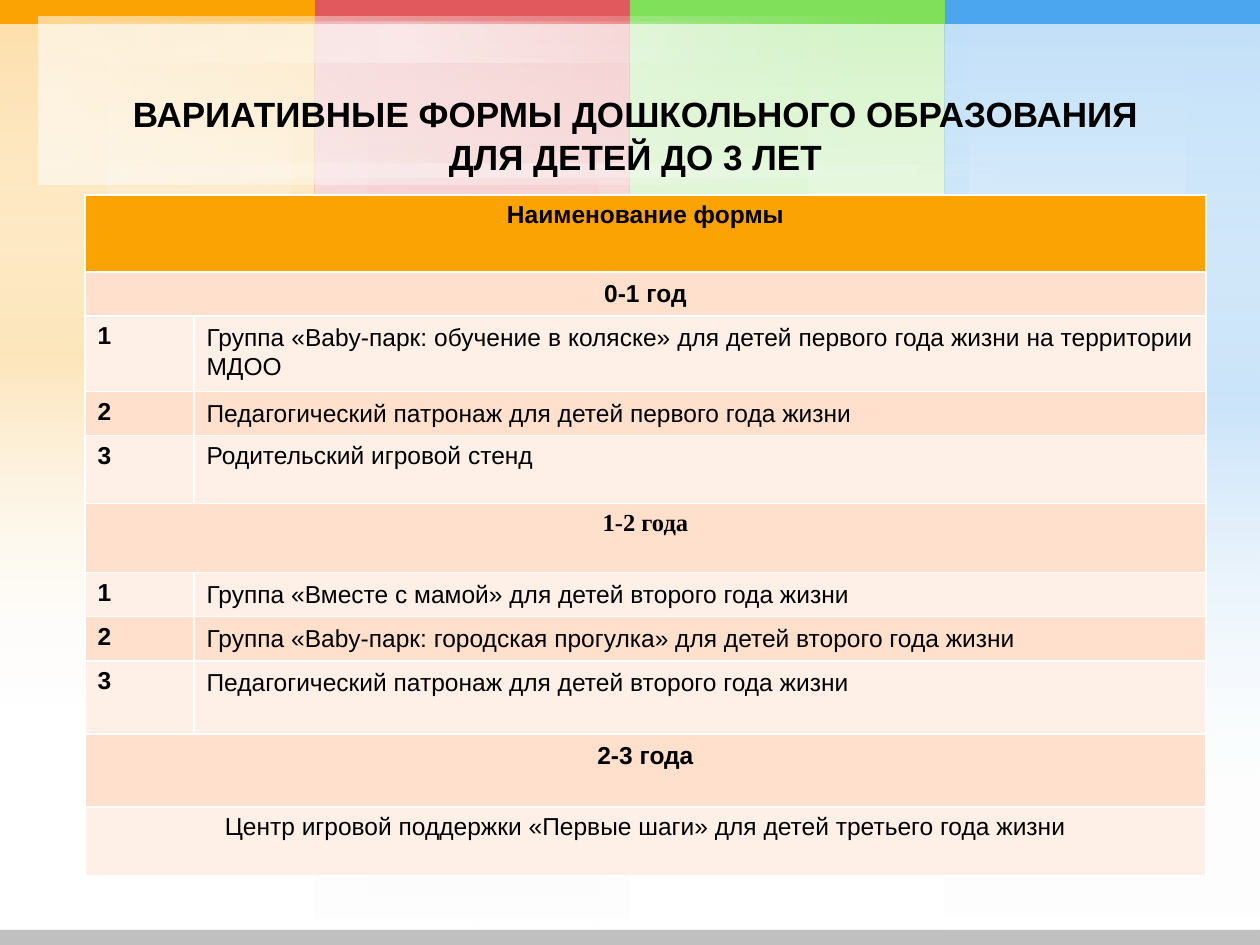
from typing import NamedTuple

from lxml import etree
from pptx import Presentation
from pptx.dml.color import RGBColor
from pptx.enum.shapes import MSO_SHAPE as Shape
from pptx.enum.text import MSO_ANCHOR as Anchor, PP_ALIGN as Align
from pptx.oxml.ns import qn
from pptx.util import Emu, Pt

PX_PER_INCH = 126
ORANGE, RED, GREEN, BLUE = "FCA304", "E1595C", "80E05A", "4BA5EF"
WHITE, BLACK, GREY = "FFFFFF", "000000", "C0C0C0"
PEACH, PALE = "FEE0CC", "FEF0E7"


class Box(NamedTuple):
    left: int
    top: int
    width: int
    height: int


class Veil(NamedTuple):
    """A translucent gradient: fading from its start, or glowing mid-way."""
    box: Box
    color: str
    glow: bool = False
    opacity: int = 20
    angle: int = 90


class Row(NamedTuple):
    height: int
    fill: str
    text: str
    number: str = ""
    bold: bool = False
    align: Align = Align.CENTER
    spacing: float = 1.0
    font: str = "Arial"


def px(length: int) -> Emu:
    return Emu(round(length * 914400 / PX_PER_INCH))


def rgb(color: str) -> RGBColor:
    return RGBColor.from_string(color)


def add_box(slide, box: Box):
    shape = slide.shapes.add_shape(Shape.RECTANGLE, *map(px, box))
    shape.shadow.inherit = False
    shape.line.fill.background()
    return shape


def add_bar(slide, box: Box, color: str) -> None:
    fill = add_box(slide, box).fill
    fill.solid()
    fill.fore_color.rgb = rgb(color)


def add_veil(slide, veil: Veil) -> None:
    shape = add_box(slide, veil.box)
    fade = [(0, veil.color, veil.opacity), (100, WHITE, 0)]
    glow = [(0, WHITE, 0), (50, veil.color, veil.opacity), (100, WHITE, 0)]
    gradient = etree.Element(qn("a:gradFill"), rotWithShape="1")
    stops = etree.SubElement(gradient, qn("a:gsLst"))
    for position, color, opacity in glow if veil.glow else fade:
        stop = etree.SubElement(stops, qn("a:gs"), pos=str(position * 1000))
        tint = etree.SubElement(stop, qn("a:srgbClr"), val=color)
        etree.SubElement(tint, qn("a:alpha"), val=str(opacity * 1000))
    etree.SubElement(gradient, qn("a:lin"), ang=str(veil.angle * 60000), scaled="0")
    shape.element.spPr.find(qn("a:prstGeom")).addnext(gradient)


def add_run(paragraph, text: str, size: int, bold: bool, font: str = "Arial") -> None:
    run = paragraph.add_run()
    run.text = text
    run.font.size, run.font.bold, run.font.name = Pt(size), bold, font
    run.font.color.rgb = rgb(BLACK)


def fill_cell(cell, row: Row, text: str, bold: bool, align: Align, spacing: float) -> None:
    cell.fill.solid()
    cell.fill.fore_color.rgb = rgb(row.fill)
    paragraph = cell.text_frame.paragraphs[0]
    paragraph.alignment, paragraph.line_spacing = align, spacing
    add_run(paragraph, text, 14, bold, row.font)


def add_forms_table(slide, box: Box, columns: list[int], rows: list[Row]) -> None:
    table = slide.shapes.add_table(len(rows), len(columns), *map(px, box)).table
    for column, width in zip(table.columns, columns):
        column.width = px(width)
    for index, row in enumerate(rows):
        table.rows[index].height = px(row.height)
        first, second = table.cell(index, 0), table.cell(index, 1)
        if row.number:
            fill_cell(first, row, row.number, True, Align.LEFT, 1.0)
            fill_cell(second, row, row.text, row.bold, row.align, row.spacing)
        else:
            first.merge(second)
            fill_cell(first, row, row.text, row.bold, row.align, row.spacing)


def form(height: int, fill: str, number: str, text: str) -> Row:
    return Row(height, fill, text, number, align=Align.JUSTIFY, spacing=1.07)


COLUMN = 315
red_column = Box(COLUMN, 0, COLUMN, 945)
green_column = Box(2 * COLUMN, 0, COLUMN, 708)
blue_column = Box(3 * COLUMN, 0, COLUMN, 941)
orange_column = Box(0, 0, COLUMN, 708)
title_band = Box(39, 17, 870, 168)

VEILS = [
    Veil(red_column, RED),
    Veil(Box(368, 0, 231, 945), RED, glow=True),
    Veil(red_column, RED),
    Veil(green_column, GREEN),
    Veil(Box(630, 0, 178, 708), GREEN, glow=True),
    Veil(green_column, GREEN),
    Veil(Box(945, 0, 24, 803), BLUE, glow=True),
    Veil(blue_column, BLUE),
    Veil(Box(1186, 0, 74, 803), BLUE, glow=True),
    Veil(blue_column, BLUE),
    Veil(orange_column, ORANGE),
    Veil(Box(292, 0, 23, 708), ORANGE, glow=True),
    Veil(Box(0, 0, 106, 708), ORANGE, glow=True),
    Veil(orange_column, ORANGE),
]
TITLE_VEILS = [
    Veil(Box(43, 164, 975, 14), WHITE, True, 35, 0),
    Veil(title_band, WHITE, False, 35, 0),
    Veil(Box(33, 22, 742, 41), WHITE, True, 35, 0),
    Veil(title_band, WHITE, False, 35, 0),
]
ROWS = [
    Row(77, ORANGE, "Наименование формы", bold=True),
    Row(42, PEACH, "0-1 год", bold=True, spacing=1.07),
    form(73, PALE, "1", "Группа «Baby-парк: обучение в коляске» для детей "
                        "первого года жизни на территории МДОО"),
    form(43, PEACH, "2", "Педагогический патронаж для детей первого года жизни"),
    Row(68, PALE, "Родительский игровой стенд", "3", align=Align.LEFT),
    Row(69, PEACH, "1-2 года", bold=True, font="Times New Roman"),
    form(43, PALE, "1", "Группа «Вместе с мамой» для детей второго года жизни"),
    form(42, PEACH, "2", "Группа «Baby-парк: городская прогулка» для детей второго года жизни"),
    form(73, PALE, "3", "Педагогический патронаж для детей второго года жизни"),
    Row(73, PEACH, "2-3 года", bold=True, spacing=1.07),
    Row(69, PALE, "Центр игровой поддержки «Первые шаги» для детей третьего года жизни"),
]


def main() -> None:
    deck = Presentation()
    deck.slide_width, deck.slide_height = px(1260), px(945)
    slide = deck.slides.add_slide(deck.slide_layouts[6])

    # Coloured background columns, top bars and title band
    for veil in VEILS:
        add_veil(slide, veil)
    for index, color in enumerate([ORANGE, RED, GREEN, BLUE]):
        add_bar(slide, Box(index * COLUMN, 0, COLUMN, 24), color)
    for veil in TITLE_VEILS:
        add_veil(slide, veil)
    add_bar(slide, Box(0, 930, 1260, 15), GREY)

    # Title
    title = slide.shapes.add_textbox(*map(px, Box(100, 66, 1071, 159))).text_frame
    title.word_wrap = True
    title.vertical_anchor = Anchor.BOTTOM
    title.margin_bottom = px(47)
    heading = title.paragraphs[0]
    heading.alignment, heading.line_spacing = Align.CENTER, 1.04
    add_run(heading, "ВАРИАТИВНЫЕ ФОРМЫ ДОШКОЛЬНОГО ОБРАЗОВАНИЯ ДЛЯ ДЕТЕЙ ДО 3 ЛЕТ", 20, True)

    # Forms of preschool education by age
    add_forms_table(slide, Box(85, 195, 1121, 672), [109, 1012], ROWS)

    deck.save("out.pptx")


if __name__ == "__main__":
    main()
